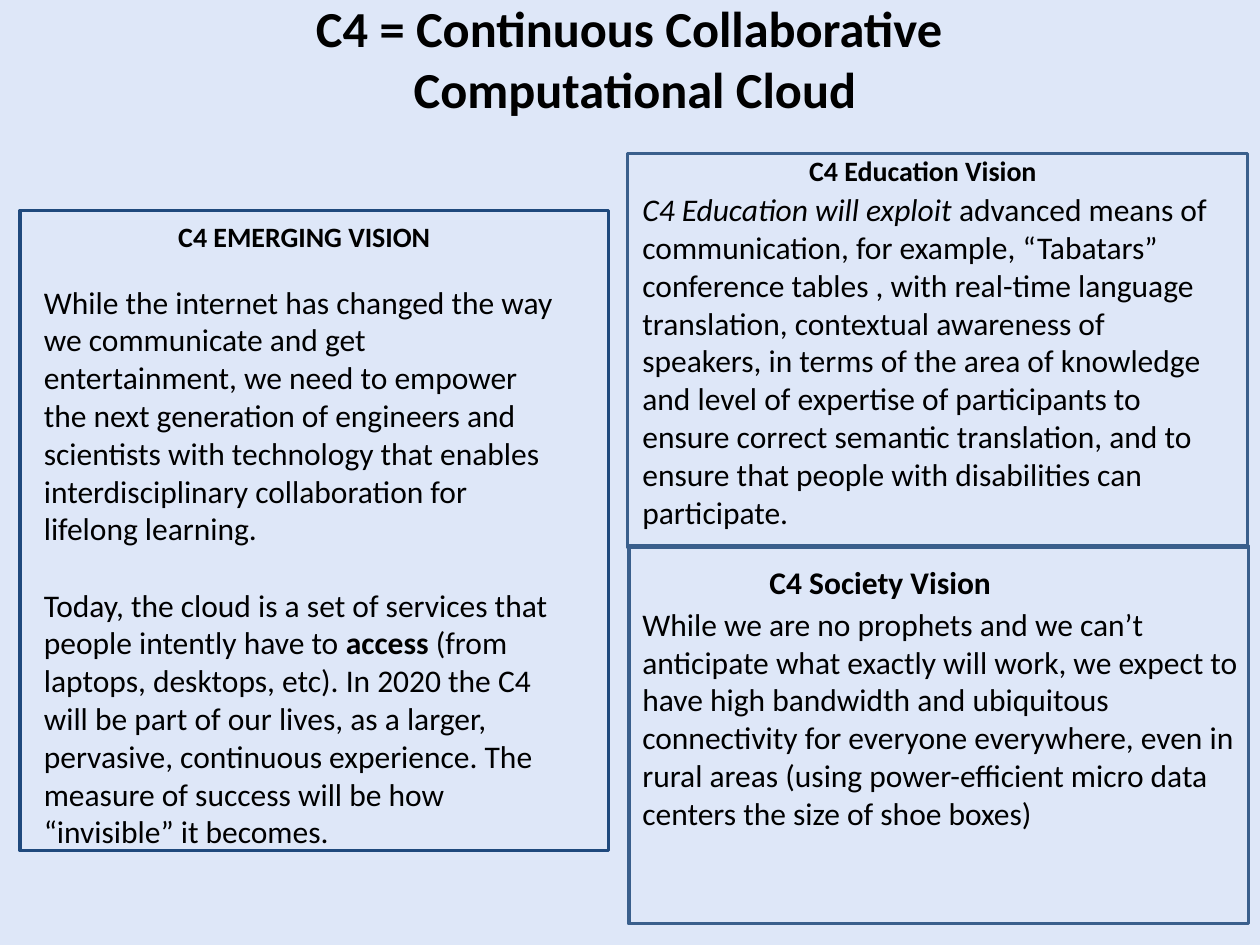
from dataclasses import dataclass

from pptx import Presentation
from pptx.dml.color import RGBColor
from pptx.enum import shapes, text
from pptx.util import Inches, Pt


@dataclass(frozen=True)
class Theme:
    font: str = "Calibri"
    background: str = "DEE7F8"
    ink: str = "000000"
    navy: str = "1F497D"
    steel: str = "3A5F8C"
    title: float = 28.8
    heading: int = 16
    body: int = 18
    outline: int = 2


THEME = Theme()
CENTER = text.PP_ALIGN.CENTER


def write_paragraph(paragraph, runs, size, bold=False, align=None, space_before=0):
    """Write runs given as (words, style); style is "", "bold" or "italic"."""
    paragraph.alignment = align
    paragraph.space_before = Pt(space_before)
    font = paragraph.font
    font.name, font.size, font.bold = THEME.font, Pt(size), bold
    font.color.rgb = RGBColor.from_string(THEME.ink)
    for words, style in runs:
        for index, line in enumerate(words.split("\n")):
            if index:
                paragraph.add_line_break()
            run = paragraph.add_run()
            run.text = line
            if style:
                setattr(run.font, style, True)


def add_text(slide, box, paragraphs, wrap=True, anchor=text.MSO_ANCHOR.TOP):
    frame = slide.shapes.add_textbox(*map(Inches, box)).text_frame
    frame.word_wrap = wrap
    frame.vertical_anchor = anchor
    for index, options in enumerate(paragraphs):
        paragraph = frame.add_paragraph() if index else frame.paragraphs[0]
        write_paragraph(paragraph, **options)


def heading(words, size=THEME.heading):
    return dict(runs=[(words, "")], size=size, bold=True, align=CENTER)


def body(*runs, space_before=0):
    return dict(runs=runs, size=THEME.body, space_before=space_before)


def add_title(slide, box):
    add_text(slide, box,
             [heading("C4 = Continuous Collaborative \nComputational Cloud", THEME.title)],
             anchor=text.MSO_ANCHOR.MIDDLE)


def add_outline(slide, box, color):
    frame = slide.shapes.add_shape(shapes.MSO_SHAPE.RECTANGLE, *map(Inches, box))
    frame.shadow.inherit = False
    frame.fill.background()
    frame.line.color.rgb = RGBColor.from_string(color)
    frame.line.width = Pt(THEME.outline)


def add_emerging_panel(slide, box):
    left, top, width, height = box
    add_outline(slide, box, THEME.navy)
    add_text(slide, (left + 0.09, top + 0.02, width - 0.34, height), [
        heading("C4 EMERGING VISION"),
        body(("While the internet has changed the way we communicate and get "
              "entertainment, we need to empower the next generation of engineers "
              "and scientists with technology that enables interdisciplinary "
              "collaboration for lifelong learning.", ""), space_before=17),
        body(("Today, the cloud is a set of services that people intently have to ", ""),
             ("access", "bold"),
             (" (from laptops, desktops, etc). In 2020 the C4 will be part of our "
              "lives, as a larger, pervasive, continuous experience. The measure of "
              "success will be how “invisible” it becomes.", ""), space_before=22),
    ])


def add_education_panel(slide, box):
    left, top, width, height = box
    add_outline(slide, box, THEME.steel)
    add_text(slide, (left + 0.02, top - 0.05, width - 0.27, 0.37),
             [heading("C4 Education Vision")])
    add_text(slide, (left + 0.02, top + 0.24, width - 0.13, height - 0.24), [
        body(("C4 Education will exploit", "italic"),
             (" advanced means of communication, for example, “Tabatars” conference "
              "tables , with real-time language translation, contextual awareness of "
              "speakers, in terms of the area of knowledge and level of expertise of "
              "participants to ensure correct semantic translation, and to ensure "
              "that people with disabilities can participate.", "")),
    ])


def add_society_panel(slide, box):
    left, top, width, height = box
    add_outline(slide, box, THEME.steel)
    add_text(slide, (left + 0.01, top + 0.42, width + 0.08, 1.92), [
        body(("While we are no prophets and we can’t anticipate what exactly will "
              "work, we expect to have high bandwidth and ubiquitous connectivity for "
              "everyone everywhere, even in rural areas (using power-efficient micro "
              "data centers the size of shoe boxes)", "")),
    ])
    add_text(slide, (left + 1.01, top + 0.09, 2.03, 0.4),
             [heading("C4 Society Vision ", THEME.body)], wrap=False)


def main():
    presentation = Presentation()
    presentation.slide_width, presentation.slide_height = Inches(10), Inches(7.5)
    slide = presentation.slides.add_slide(presentation.slide_layouts[6])
    slide.background.fill.solid()
    slide.background.fill.fore_color.rgb = RGBColor.from_string(THEME.background)

    # Title, then the left panel and the two stacked right panels
    add_title(slide, (0.08, 0, 9.92, 0.92))
    add_emerging_panel(slide, (0.16, 1.67, 4.67, 5.08))
    add_education_panel(slide, (4.98, 1.22, 4.92, 3.12))
    add_society_panel(slide, (4.99, 4.33, 4.92, 3))

    presentation.save("out.pptx")


if __name__ == "__main__":
    main()
